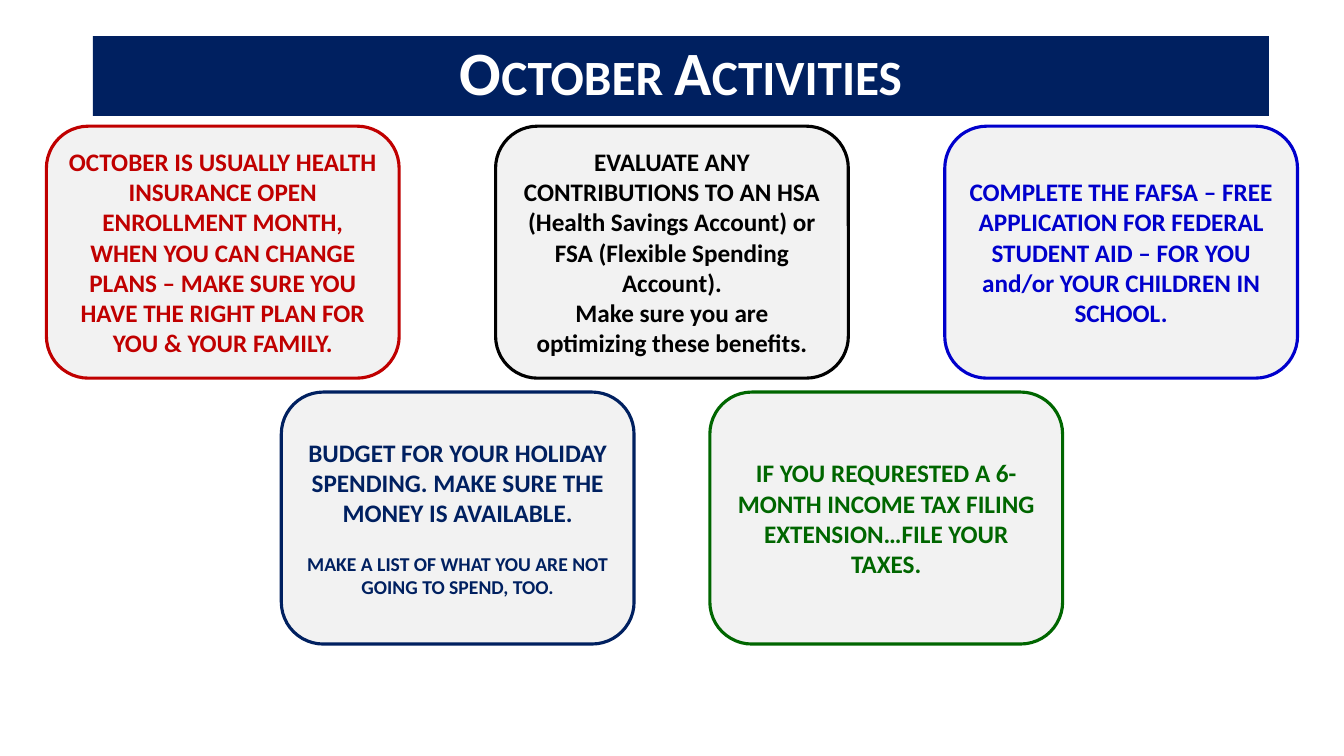
from pptx import Presentation
from pptx.dml.color import RGBColor
from pptx.enum.shapes import MSO_SHAPE
from pptx.enum.text import MSO_ANCHOR, PP_ALIGN
from pptx.util import Cm, Pt

RECT = MSO_SHAPE.RECTANGLE
ROUNDED = MSO_SHAPE.ROUNDED_RECTANGLE
MIDDLE = MSO_ANCHOR.MIDDLE
CENTER = PP_ALIGN.CENTER

FONT = "Calibri"
COLORS = {
    "navy": "002060", "white": "FFFFFF", "card": "F2F2F2", "red": "C00000",
    "black": "000000", "blue": "0000CC", "green": "006600",
}
CARD_W, CARD_H = 8.89, 6.35

# Each row: left of first card, top, step between cards, cards.
# Each card: color, paragraphs as (text, size, space before).
ROWS = [
    (1.17, 3.18, 11.32, [
        ("red", [("OCTOBER IS USUALLY HEALTH INSURANCE OPEN ENROLLMENT MONTH, "
                  "WHEN YOU CAN CHANGE PLANS – MAKE SURE YOU HAVE THE RIGHT "
                  "PLAN FOR YOU & YOUR FAMILY.", 18, 0)]),
        ("black", [("EVALUATE ANY CONTRIBUTIONS TO AN HSA (Health Savings "
                    "Account) or FSA (Flexible Spending Account).", 18, 0),
                   ("Make sure you are optimizing these benefits.", 18, 0)]),
        ("blue", [("COMPLETE THE FAFSA – FREE APPLICATION FOR FEDERAL STUDENT "
                   "AID – FOR YOU and/or YOUR CHILDREN IN SCHOOL.", 18, 0)]),
    ]),
    (7.09, 9.88, 10.8, [
        ("navy", [("BUDGET FOR YOUR HOLIDAY SPENDING. MAKE SURE THE MONEY IS "
                   "AVAILABLE.", 18, 0),
                  ("MAKE A LIST OF WHAT YOU ARE NOT GOING TO SPEND, TOO.",
                   14, 17)]),
        ("green", [("IF YOU REQURESTED A 6-MONTH INCOME TAX FILING "
                    "EXTENSION…FILE YOUR TAXES.", 18, 0)]),
    ]),
]


def rgb(name):
    return RGBColor.from_string(COLORS[name])


def add_box(s, kind, left, top, width, height, fill):
    sp = s.shapes.add_shape(kind, Cm(left), Cm(top), Cm(width), Cm(height))
    sp.shadow.inherit = False
    sp.fill.solid()
    sp.fill.fore_color.rgb = rgb(fill)
    sp.text_frame.word_wrap = True
    sp.text_frame.vertical_anchor = MIDDLE
    return sp


def style_paragraph(p, size, color):
    p.alignment = CENTER
    p.font.name = FONT
    p.font.size = Pt(size)
    p.font.bold = True
    p.font.color.rgb = rgb(color)


def add_title(s, text):
    sp = add_box(s, RECT, 2.34, 0.91, 29.64, 2.01, "navy")
    sp.line.fill.background()
    p = sp.text_frame.paragraphs[0]
    r = p.add_run()
    r.text = text
    style_paragraph(p, 44, "white")
    p.line_spacing = 0.9
    # Small capitals
    r._r.get_or_add_rPr().set("cap", "small")


def add_card(s, left, top, color, paragraphs):
    sp = add_box(s, ROUNDED, left, top, CARD_W, CARD_H, "card")
    sp.line.color.rgb = rgb(color)
    sp.line.width = Pt(2.25)
    tf = sp.text_frame
    for i, (text, size, space) in enumerate(paragraphs):
        p = tf.add_paragraph() if i else tf.paragraphs[0]
        p.text = text
        style_paragraph(p, size, color)
        if space:
            p.space_before = Pt(space)


def main():
    prs = Presentation()
    prs.slide_width, prs.slide_height = Cm(33.87), Cm(19.05)
    s = prs.slides.add_slide(prs.slide_layouts[6])

    # Title banner
    add_title(s, "October Activities")

    # Activity cards
    for left, top, step, cards in ROWS:
        for i, (color, paragraphs) in enumerate(cards):
            add_card(s, left + i * step, top, color, paragraphs)

    prs.save("out.pptx")


if __name__ == "__main__":
    main()
